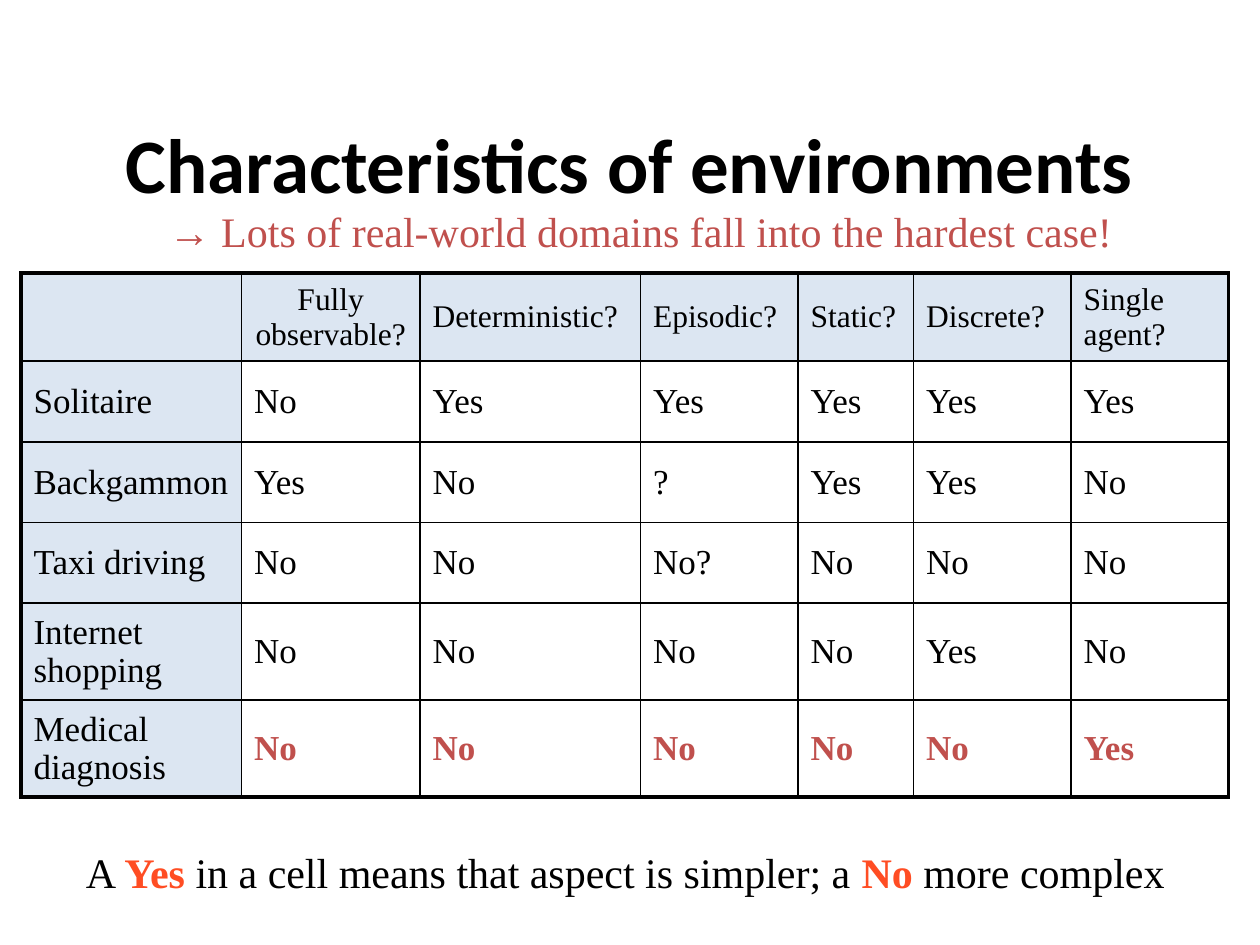
from dataclasses import dataclass

from lxml import etree
from pptx import Presentation
from pptx import util as u
from pptx.dml import color
from pptx.enum import text as t
from pptx.oxml import ns

COLORS = {
    "ink": "000000",
    "header": "DCE6F2",
    "hardest": "C0504D",
    "keyword": "FF4D23",
}
SERIF = "Times New Roman"
THIN, THICK = 1, 2.25

COLUMN_WIDTHS = [126, 102, 126, 90, 66, 90, 90]
ROW_HEIGHTS = [50.4, 46.1, 46.1, 46.1, 55.4, 55.4]
ENVIRONMENTS = [
    ["", "Fully observable?", "Deterministic?", "Episodic?", "Static?", "Discrete?", "Single agent?"],
    ["Solitaire", "No", "Yes", "Yes", "Yes", "Yes", "Yes"],
    ["Backgammon", "Yes", "No", "?", "Yes", "Yes", "No"],
    ["Taxi driving", "No", "No", "No?", "No", "No", "No"],
    ["Internet shopping", "No", "No", "No", "No", "Yes", "No"],
    ["Medical diagnosis", "No", "No", "No", "No", "No", "Yes"],
]


@dataclass
class Phrase:
    wording: str
    size: float = 24
    color: str = "ink"
    bold: bool = False
    font: str = SERIF


@dataclass
class Caption:
    left: float
    top: float
    width: float
    height: float
    phrases: list[Phrase]
    align: t.PP_ALIGN = t.PP_ALIGN.LEFT
    wrap: bool = True


def add_phrase(paragraph, phrase: Phrase) -> None:
    run = paragraph.add_run()
    run.text = phrase.wording
    run.font.name = phrase.font
    run.font.size = u.Pt(phrase.size)
    run.font.bold = phrase.bold
    run.font.color.rgb = color.RGBColor.from_string(COLORS[phrase.color])


def place(shape, left: float, top: float, width: float, height: float) -> None:
    shape.left, shape.top = u.Pt(left), u.Pt(top)
    shape.width, shape.height = u.Pt(width), u.Pt(height)


def add_title(slide, phrase: Phrase) -> None:
    title = slide.shapes.title
    place(title, 54, 48, 612, 90)
    title.text_frame.vertical_anchor = t.MSO_ANCHOR.MIDDLE
    heading = title.text_frame.paragraphs[0]
    heading.alignment = t.PP_ALIGN.CENTER
    add_phrase(heading, phrase)


def add_caption(slide, caption: Caption) -> None:
    box = slide.shapes.add_textbox(0, 0, 0, 0)
    place(box, caption.left, caption.top, caption.width, caption.height)
    box.text_frame.word_wrap = caption.wrap
    box.text_frame.auto_size = t.MSO_AUTO_SIZE.SHAPE_TO_FIT_TEXT
    line = box.text_frame.paragraphs[0]
    line.alignment = caption.align
    for phrase in caption.phrases:
        add_phrase(line, phrase)


def add_border(cell, side: str, width: float) -> None:
    properties = cell._tc.get_or_add_tcPr()
    border = etree.SubElement(properties, ns.qn(f"a:ln{side}"), w=str(u.Pt(width)))
    fill = etree.SubElement(border, ns.qn("a:solidFill"))
    etree.SubElement(fill, ns.qn("a:srgbClr"), val=COLORS["ink"])


def add_environments(slide, left: float, top: float) -> None:
    last_row, last_column = len(ROW_HEIGHTS) - 1, len(COLUMN_WIDTHS) - 1
    grid = slide.shapes.add_table(
        last_row + 1, last_column + 1, u.Pt(left), u.Pt(top),
        u.Pt(sum(COLUMN_WIDTHS)), u.Pt(sum(ROW_HEIGHTS)),
    ).table
    for column, width in zip(grid.columns, COLUMN_WIDTHS):
        column.width = u.Pt(width)
    for row, height in zip(grid.rows, ROW_HEIGHTS):
        row.height = u.Pt(height)

    for r, answers in enumerate(ENVIRONMENTS):
        for c, answer in enumerate(answers):
            cell = grid.cell(r, c)
            outer = {"L": c == 0, "R": c == last_column, "T": r == 0, "B": r == last_row}
            for side, is_outer in outer.items():
                add_border(cell, side, THICK if is_outer else THIN)
            if r == 0 or c == 0:
                cell.fill.solid()
                cell.fill.fore_color.rgb = color.RGBColor.from_string(COLORS["header"])
            else:
                cell.fill.background()
            cell.vertical_anchor = t.MSO_ANCHOR.MIDDLE
            if not answer:
                continue
            line = cell.text_frame.paragraphs[0]
            line.alignment = t.PP_ALIGN.CENTER if (r, c) == (0, 1) else t.PP_ALIGN.LEFT
            hardest = r == last_row and c > 0
            add_phrase(line, Phrase(
                answer, 18 if r == 0 else 20, "hardest" if hardest else "ink", hardest,
            ))


def main() -> None:
    deck = Presentation()
    deck.slide_width, deck.slide_height = u.Pt(720), u.Pt(540)
    slide = deck.slides.add_slide(deck.slide_layouts[5])

    add_title(slide, Phrase("Characteristics of environments", 44, bold=True, font="Calibri"))
    add_environments(slide, 12, 156)
    add_caption(slide, Caption(
        84, 114, 564, 36,
        [Phrase("→ Lots of real-world domains fall into the hardest case!", color="hardest")],
        align=t.PP_ALIGN.CENTER,
    ))
    add_caption(slide, Caption(
        42, 480, 649.5, 36.5,
        [
            Phrase("A "),
            Phrase("Yes", color="keyword", bold=True),
            Phrase(" in a cell means that aspect is simpler; a "),
            Phrase("No", color="keyword", bold=True),
            Phrase(" more complex"),
        ],
        wrap=False,
    ))
    deck.save("out.pptx")


if __name__ == "__main__":
    main()
